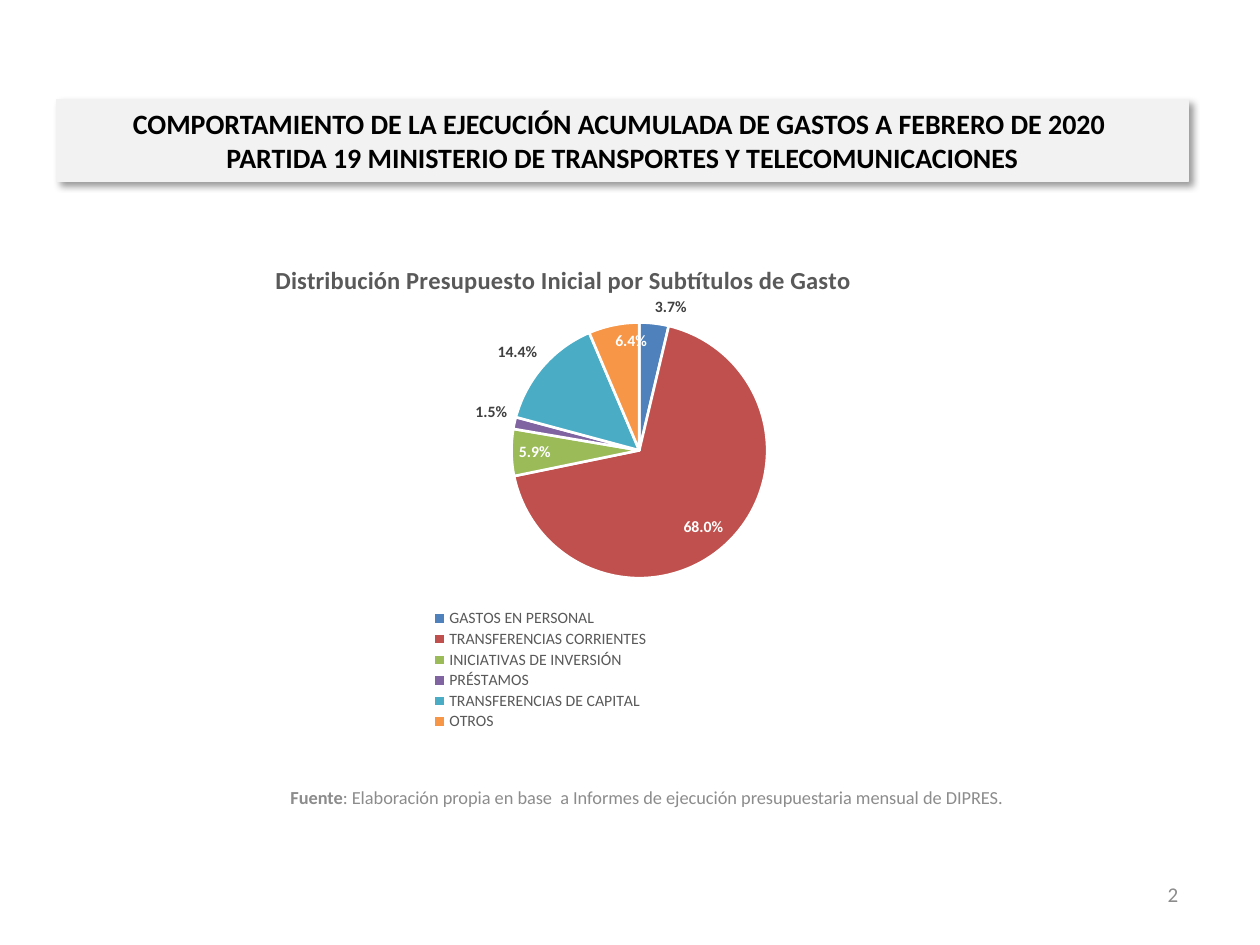
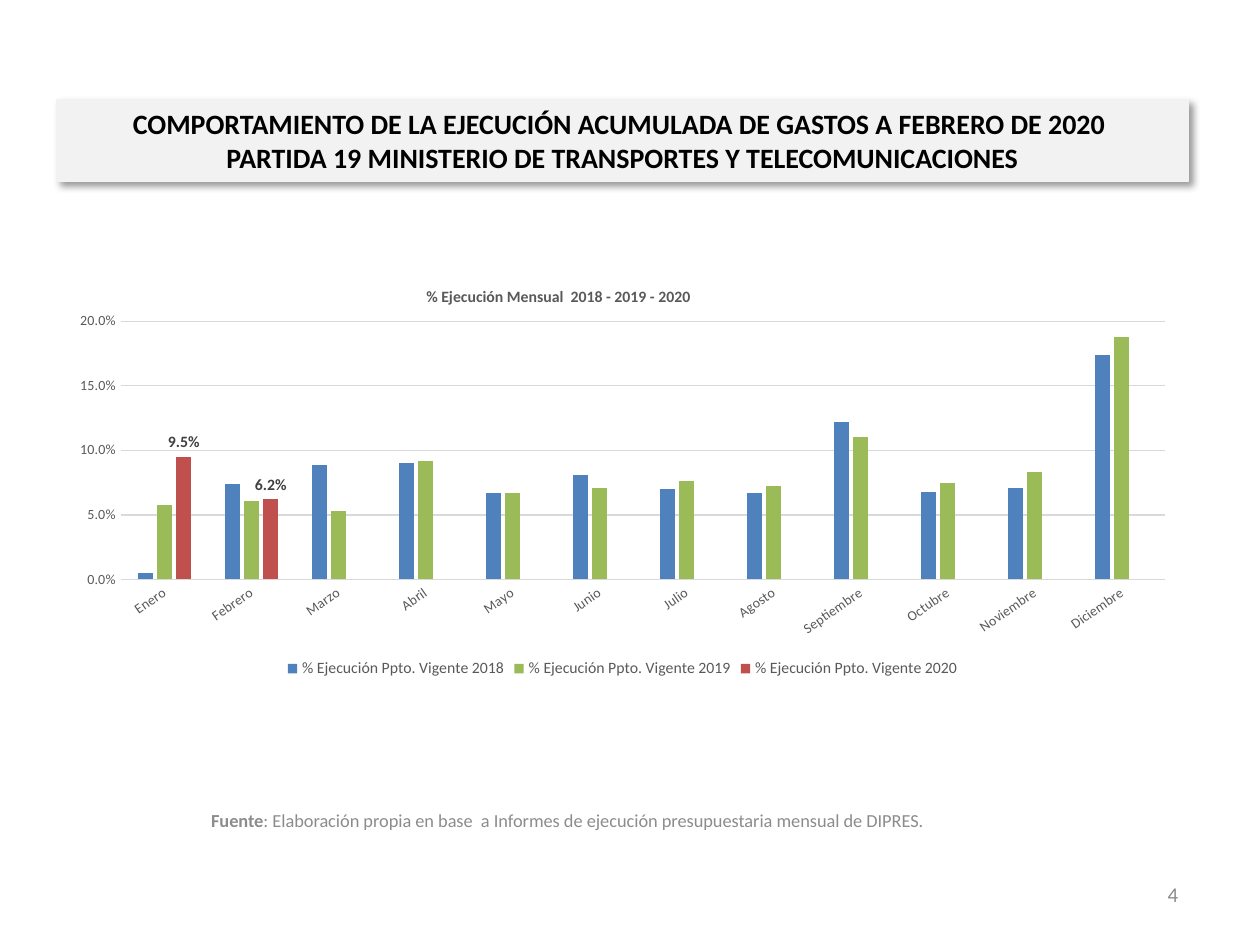
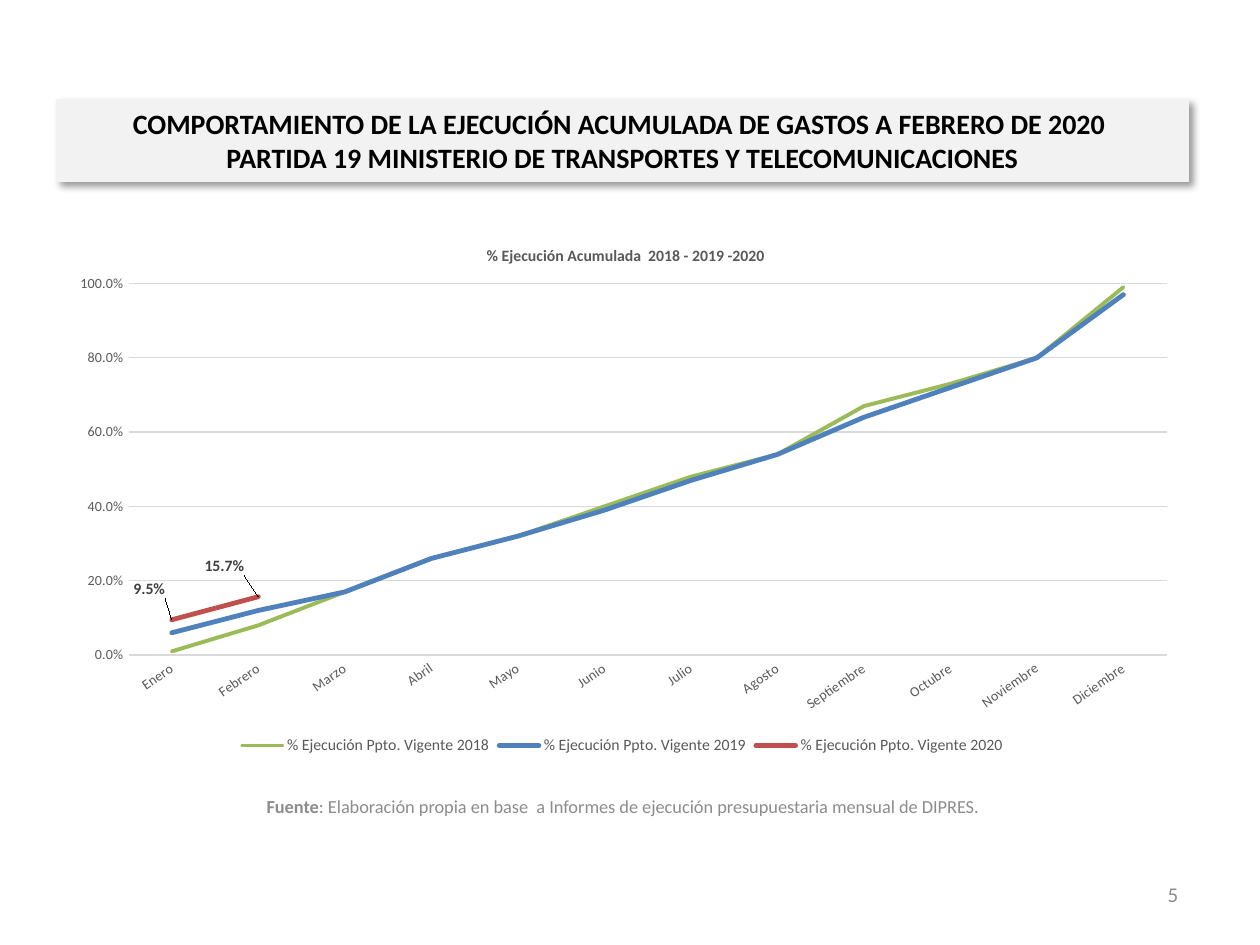
from lxml import etree
from pptx import Presentation
from pptx import util as u
from pptx.chart import data as chart_data
from pptx.dml.color import RGBColor
from pptx.enum import chart as charts, shapes, text
from pptx.oxml import parse_xml
from pptx.oxml.ns import nsdecls, qn

FONT = "Calibri"
BLACK = RGBColor(0x00, 0x00, 0x00)
WHITE = RGBColor(0xFF, 0xFF, 0xFF)
BAND = RGBColor(0xF2, 0xF2, 0xF2)
FOOTER = RGBColor(0x8C, 0x8C, 0x8C)
CHART_TEXT = RGBColor(0x59, 0x59, 0x59)
LABEL = RGBColor(0x40, 0x40, 0x40)
GRID = RGBColor(0xD9, 0xD9, 0xD9)
BLUE = RGBColor(0x4F, 0x81, 0xBD)
RED = RGBColor(0xC0, 0x50, 0x4D)
GREEN = RGBColor(0x9B, 0xBB, 0x59)
PURPLE = RGBColor(0x80, 0x64, 0xA2)
TEAL = RGBColor(0x4B, 0xAC, 0xC6)
ORANGE = RGBColor(0xF7, 0x96, 0x46)

HEADING = [
    "COMPORTAMIENTO DE LA EJECUCIÓN ACUMULADA DE GASTOS A FEBRERO DE 2020 ",
    "PARTIDA 19 MINISTERIO DE TRANSPORTES Y TELECOMUNICACIONES",
]
SOURCE = ": Elaboración propia en base  a Informes de ejecución presupuestaria mensual de DIPRES."
MONTHS = ["Enero", "Febrero", "Marzo", "Abril", "Mayo", "Junio", "Julio",
          "Agosto", "Septiembre", "Octubre", "Noviembre", "Diciembre"]
YEAR_SERIES = "% Ejecución Ppto. Vigente {}"

EXPENSES = [
    ("GASTOS EN PERSONAL", 3.7, BLUE),
    ("TRANSFERENCIAS CORRIENTES", 68, RED),
    ("INICIATIVAS DE INVERSIÓN", 5.9, GREEN),
    ("PRÉSTAMOS", 1.5, PURPLE),
    ("TRANSFERENCIAS DE CAPITAL", 14.4, TEAL),
    ("OTROS", 6.4, ORANGE),
]
INSIDE_LABELS = [1, 2, 5]
MONTHLY = {
    2018: [0.005, 0.074, 0.089, 0.09, 0.067, 0.081, 0.07, 0.067, 0.122, 0.068, 0.071, 0.174],
    2019: [0.058, 0.061, 0.053, 0.092, 0.067, 0.071, 0.076, 0.072, 0.11, 0.075, 0.083, 0.188],
    2020: [0.095, 0.062],
}
ACCUMULATED = {
    2018: [0.01, 0.08, 0.17, 0.26, 0.32, 0.4, 0.48, 0.54, 0.67, 0.73, 0.8, 0.99],
    2019: [0.06, 0.12, 0.17, 0.26, 0.32, 0.39, 0.47, 0.54, 0.64, 0.72, 0.8, 0.97],
    2020: [0.095, 0.157],
}


def inches(box):
    return [u.Inches(length) for length in box]


def style_font(font, size, color, bold=False):
    font.name = FONT
    font.size = u.Pt(size)
    font.bold = bold
    font.color.rgb = color


def add_run(paragraph, words, size, color, bold=False):
    run = paragraph.add_run()
    run.text = words
    style_font(run.font, size, color, bold)


def add_band(slide, box):
    band = slide.shapes.add_shape(shapes.MSO_SHAPE.RECTANGLE, *inches(box))
    band.fill.solid()
    band.fill.fore_color.rgb = BAND
    band.line.color.rgb = BAND
    band.line.width = u.Pt(0.75)
    band._element.spPr.append(parse_xml(
        f'<a:effectLst {nsdecls("a")}><a:outerShdw blurRad="{u.Pt(4)}" dist="{u.Pt(3)}" '
        'dir="2700000" algn="tl" rotWithShape="0"><a:srgbClr val="000000">'
        '<a:alpha val="40000"/></a:srgbClr></a:outerShdw></a:effectLst>'))
    frame = band.text_frame
    frame.word_wrap = True
    frame.vertical_anchor = text.MSO_ANCHOR.MIDDLE
    paragraph = frame.paragraphs[0]
    paragraph.alignment = text.PP_ALIGN.CENTER
    add_run(paragraph, HEADING[0], 16, BLACK, True)
    paragraph.add_line_break()
    add_run(paragraph, HEADING[1], 16, BLACK, True)


def add_text(slide, box, alignment, runs):
    frame = slide.shapes.add_textbox(*inches(box)).text_frame
    frame.word_wrap = True
    frame.vertical_anchor = text.MSO_ANCHOR.MIDDLE
    paragraph = frame.paragraphs[0]
    paragraph.alignment = alignment
    for words, size, bold in runs:
        add_run(paragraph, words, size, FOOTER, bold)


def add_page(presentation, number, source_box):
    slide = presentation.slides.add_slide(presentation.slide_layouts[6])
    add_text(slide, source_box, text.PP_ALIGN.CENTER,
             [("Fuente", 10.5, True), (SOURCE, 10.5, False)])
    add_text(slide, (7.12, 6.9, 2.33, 0.4), text.PP_ALIGN.RIGHT, [(str(number), 12, False)])
    add_band(slide, (0.45, 0.79, 8.98, 0.65))
    return slide


def set_layout(element, index, edge=True, **fractions):
    for old in element.findall(qn("c:layout")):
        element.remove(old)
    layout = etree.Element(qn("c:layout"))
    manual = etree.SubElement(layout, qn("c:manualLayout"))
    if element.tag == qn("c:plotArea"):
        etree.SubElement(manual, qn("c:layoutTarget"), val="inner")
    if edge:
        for mode in ("xMode", "yMode"):
            etree.SubElement(manual, qn(f"c:{mode}"), val="edge")
    for name, fraction in fractions.items():
        etree.SubElement(manual, qn(f"c:{name}"), val=f"{fraction:.4f}")
    element.insert(index, layout)


def place(element, index, box, part):
    fractions = {"x": part[0] / box[2], "y": part[1] / box[3]}
    if len(part) == 4:
        fractions.update(w=part[2] / box[2], h=part[3] / box[3])
    set_layout(element, index, **fractions)


def add_chart(slide, kind, box, data, title, title_size, title_at, plot_box):
    chart = slide.shapes.add_chart(kind, *inches(box), data).chart
    style_font(chart.font, 10, BLACK)
    chart.has_title = True
    add_run(chart.chart_title.text_frame.paragraphs[0], title, title_size, CHART_TEXT, True)
    place(chart.chart_title._element, 1, box, title_at)
    place(chart._chartSpace.chart.plotArea, 0, box, plot_box)
    chart.has_legend = True
    chart.legend.position = charts.XL_LEGEND_POSITION.BOTTOM
    chart.legend.include_in_layout = False
    style_font(chart.legend.font, 9, CHART_TEXT)
    return chart


def show_values(labels, number_format, position):
    labels.show_value = True
    labels.number_format = number_format
    labels.number_format_is_linked = False
    labels.position = position
    style_font(labels.font, 9, LABEL, True)


def year_data(values):
    data = chart_data.CategoryChartData(number_format="0.0%")
    data.categories = MONTHS
    for year, shares in values.items():
        data.add_series(YEAR_SERIES.format(year), shares + [None] * (len(MONTHS) - len(shares)))
    return data


def style_axes(chart, maximum, step, axis_width):
    months, shares = chart.category_axis, chart.value_axis
    for axis in (months, shares):
        axis.major_tick_mark = axis.minor_tick_mark = charts.XL_TICK_MARK.NONE
        style_font(axis.tick_labels.font, 8, CHART_TEXT)
    months._element.xpath("c:txPr/a:bodyPr")[0].set("rot", "-2100000")
    months.format.line.color.rgb = GRID
    months.format.line.width = u.Pt(axis_width)
    shares.minimum_scale = 0
    shares.maximum_scale = maximum
    shares.major_unit = step
    shares.tick_labels.number_format = "0.0%"
    shares.tick_labels.number_format_is_linked = False
    shares.format.line.fill.background()
    shares.major_gridlines.format.line.color.rgb = GRID
    shares.major_gridlines.format.line.width = u.Pt(0.75)


def add_distribution_chart(slide, box):
    percent = '0.0"%"'
    data = chart_data.CategoryChartData(number_format=percent)
    data.categories = [name for name, share, color in EXPENSES]
    data.add_series("Series 1", [share for name, share, color in EXPENSES])
    chart = add_chart(slide, charts.XL_CHART_TYPE.PIE, box, data,
                      "Distribución Presupuesto Inicial por Subtítulos de Gasto",
                      14, (1.64, 0.29), (0.21, 0.8, 8.71, 2.03))
    place(chart.legend._element, 1, box, (2.78, 3.06, 2, 1))
    series = chart.plots[0].series[0]
    show_values(series.data_labels, percent, charts.XL_LABEL_POSITION.OUTSIDE_END)
    for index, (name, share, color) in enumerate(EXPENSES):
        point = series.points[index]
        point.format.fill.solid()
        point.format.fill.fore_color.rgb = color
        point.format.line.color.rgb = WHITE
        point.format.line.width = u.Pt(1.5)
        if index in INSIDE_LABELS:
            style_font(point.data_label.font, 9, WHITE, True)
            point.data_label.position = charts.XL_LABEL_POSITION.INSIDE_END


def add_monthly_chart(slide, box):
    chart = add_chart(slide, charts.XL_CHART_TYPE.COLUMN_CLUSTERED, box, year_data(MONTHLY),
                      "% Ejecución Mensual  2018 - 2019 - 2020",
                      9, (2.91, 0.18), (0.51, 0.48, 8.29, 2.05))
    style_axes(chart, 0.2, 0.05, 0.75)
    plot = chart.plots[0]
    plot.vary_by_categories = False
    plot.gap_width = 219
    plot.overlap = -27
    for series, color in zip(plot.series, (BLUE, GREEN, RED)):
        series.format.fill.solid()
        series.format.fill.fore_color.rgb = color
    show_values(plot.series[2].data_labels, "0.0%", charts.XL_LABEL_POSITION.OUTSIDE_END)


def add_accumulated_chart(slide, box):
    chart = add_chart(slide, charts.XL_CHART_TYPE.LINE, box, year_data(ACCUMULATED),
                      "% Ejecución Acumulada  2018 - 2019 -2020",
                      9, (3.39, 0.18), (0.57, 0.51, 8.24, 2.95))
    style_axes(chart, 1, 0.2, 1)
    plot = chart.plots[0]
    plot.vary_by_categories = False
    for series, color, width in zip(plot.series, (GREEN, BLUE, RED), (2.25, 2.75, 2.75)):
        series.smooth = False
        series.marker.style = charts.XL_MARKER_STYLE.NONE
        series.format.line.color.rgb = color
        series.format.line.width = u.Pt(width)
        series.format.line._get_or_add_ln().set("cap", "rnd")
    current = plot.series[2]
    above = charts.XL_LABEL_POSITION.ABOVE
    show_values(current.data_labels, "0.0%", above)
    for index, shift in enumerate((-0.02, -0.03)):
        label = current.points[index].data_label
        style_font(label.font, 9, LABEL, True)
        label.position = above
        set_layout(label._get_or_add_dLbl(), 1, edge=False, x=shift, y=-0.03)


def main():
    presentation = Presentation()
    presentation.slide_width = u.Inches(10)
    presentation.slide_height = u.Inches(7.5)
    add_distribution_chart(add_page(presentation, 2, (0.83, 6.13, 8.61, 0.4)),
                           (0.51, 1.76, 8.92, 4.37))
    add_monthly_chart(add_page(presentation, 4, (0.45, 6.35, 8.11, 0.32)),
                      (0.45, 2.07, 8.98, 3.35))
    add_accumulated_chart(add_page(presentation, 5, (0.97, 6.2, 7.95, 0.4)),
                          (0.45, 1.74, 8.98, 4.29))
    presentation.save("out.pptx")


if __name__ == "__main__":
    main()
